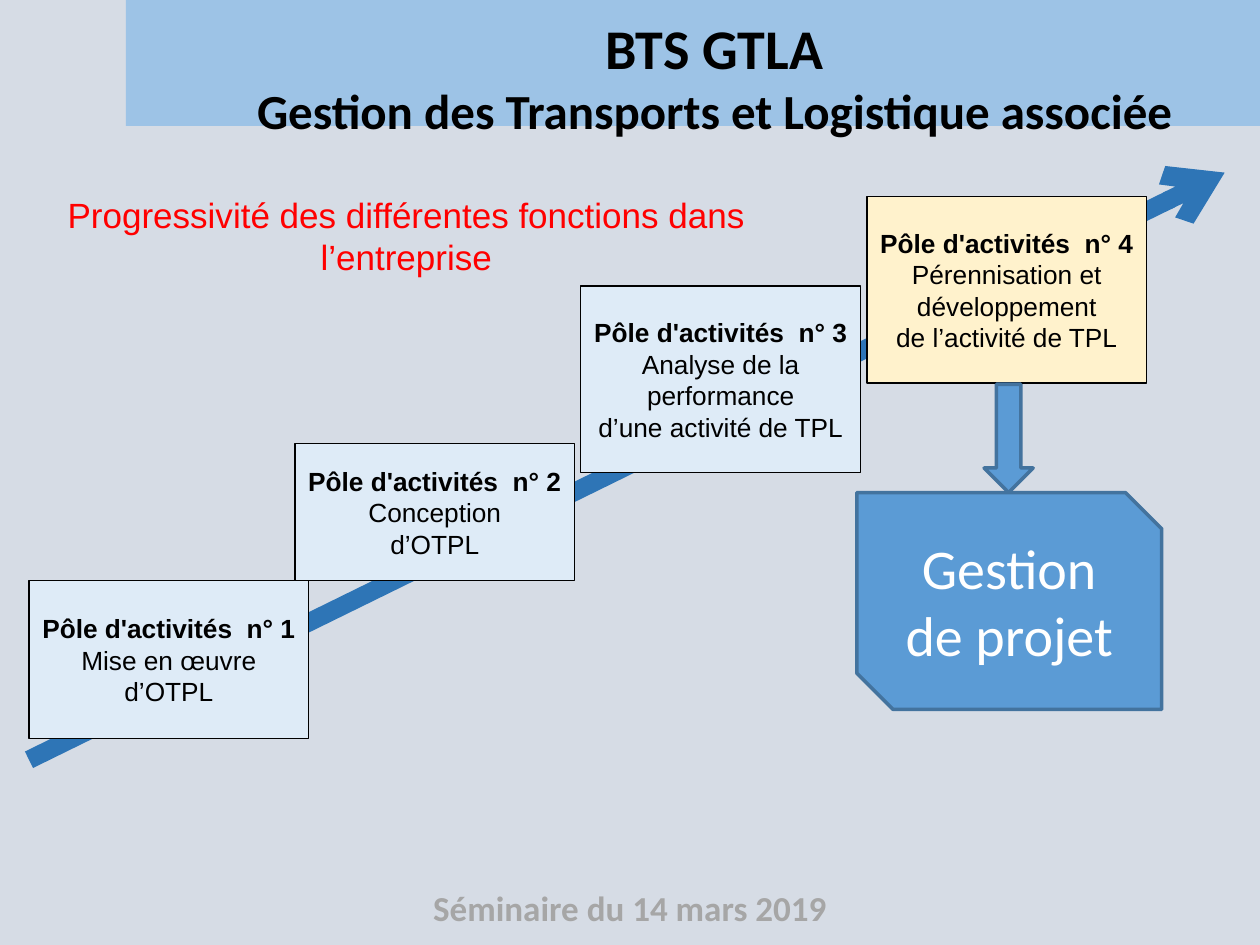
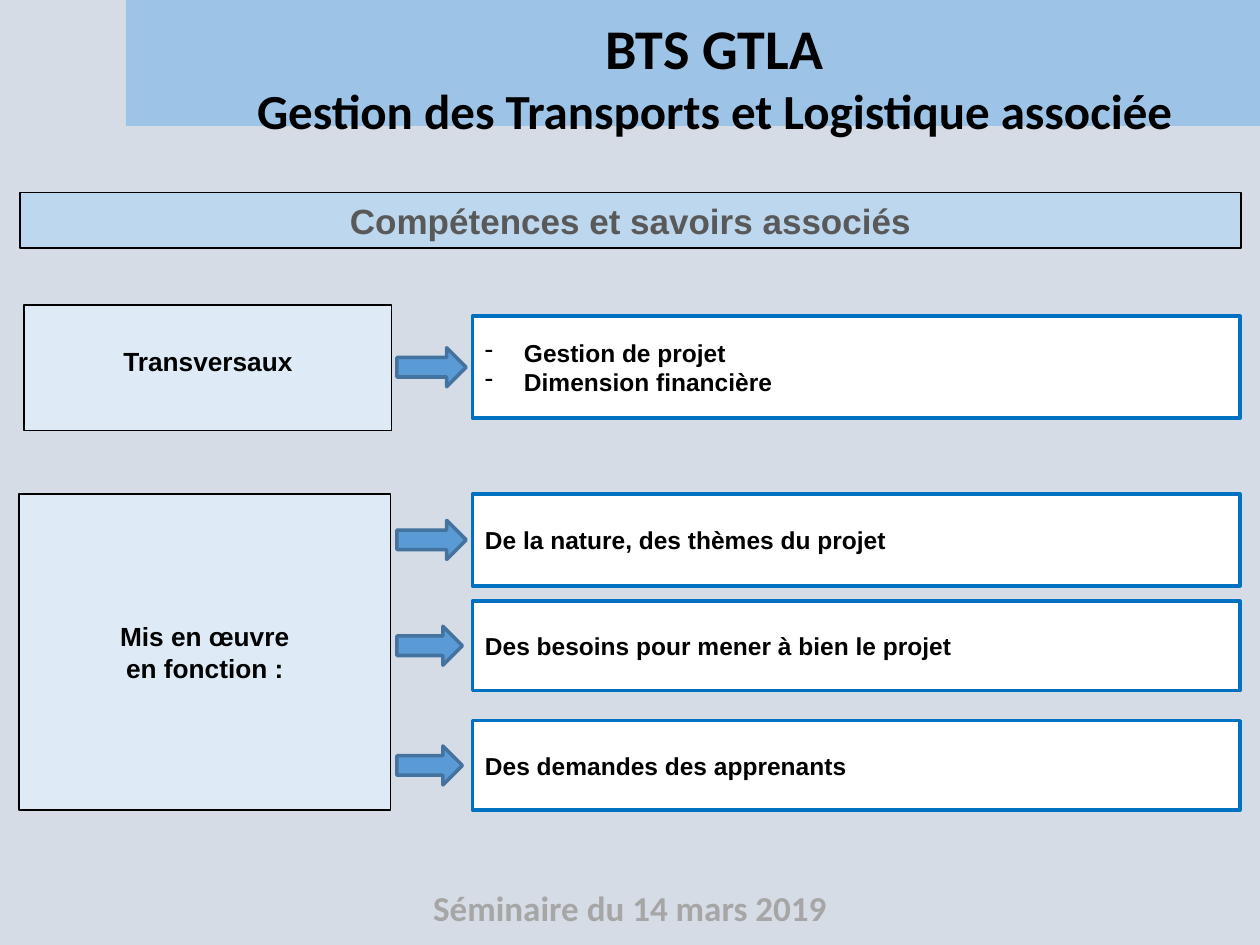
import pptx
import pptx.dml.color
import pptx.enum.shapes
import pptx.enum.text
import pptx.oxml.ns
import pptx.util
from lxml import etree

Inches = pptx.util.Inches
Pt = pptx.util.Pt
MSO = pptx.enum.shapes.MSO_SHAPE
ALIGN = pptx.enum.text.PP_ALIGN
ANCHOR = pptx.enum.text.MSO_ANCHOR
AUTO = pptx.enum.text.MSO_AUTO_SIZE

# ---- Content ----
TITLE = ["BTS GTLA", "Gestion des Transports et Logistique associée"]
FOOTER = "Séminaire du 14 mars 2019"

PROGRESSION = "Progressivité des différentes fonctions dans l’entreprise"
POLES = [  # left, top, height, fill, heading, lines
    (0.23, 4.61, 1.25, "pale", "Pôle d'activités  n° 1", ["Mise en œuvre", "d’OTPL"]),
    (2.34, 3.52, 1.09, "pale", "Pôle d'activités  n° 2", ["Conception", "d’OTPL"]),
    (4.61, 2.27, 1.48, "pale", "Pôle d'activités  n° 3",
     ["Analyse de la", "performance", "d’une activité de TPL"]),
    (6.88, 1.56, 1.48, "cream", "Pôle d'activités  n° 4",
     ["Pérennisation et", "développement", "de l’activité de TPL"]),
]
POLE_WIDTH = 2.22
PROJECT = "Gestion de projet"

SKILLS = "Compétences et savoirs associés"
GROUPS = [  # box, lines, bottom inset
    ((0.19, 2.42, 2.92, 1), ["Transversaux"], 0.16),
    ((0.15, 3.92, 2.95, 2.51), ["Mis en œuvre", "en fonction :"], 0.05),
]
ITEMS = [  # top, height, arrow width, lines
    (2.51, 0.81, 0.55, ["Gestion de projet", "Dimension financière"]),
    (3.92, 0.73, 0.55, ["De la nature, des thèmes du projet"]),
    (4.77, 0.71, 0.52, ["Des besoins pour mener à bien le projet"]),
    (5.72, 0.71, 0.52, ["Des demandes des apprenants"]),
]
ITEM_LEFT, ITEM_WIDTH = 3.75, 6.09
ARROW_LEFT, ARROW_HEIGHT = 3.15, 0.31

# Banner: straight top, then two Bézier curves along the bottom edge
BANNER_TOP = [(1.25, 0), (10, 0), (10, 1.21)]
BANNER_CURVES = [
    [(10, 1.21), (9.29, 1.44), (7.16, 1.14), (5.7, 1.17)],
    [(5.7, 1.17), (4.24, 1.21), (1.99, 1.64), (1.25, 1.41)],
]

THEME = {
    "color": {
        "background": "D6DCE5", "banner": "9DC3E6", "band": "BDD7EE",
        "pale": "DEEBF7", "cream": "FFF2CC", "white": "FFFFFF",
        "accent": "5B9BD5", "accent edge": "43739E", "trend": "2E75B6",
        "item edge": "0070C0", "black": "000000",
    },
    "text": {
        "title": {"size": 32, "name": "Calibri", "color": "000000", "bold": True},
        "subtitle": {"size": 28, "name": "Calibri", "color": "000000", "bold": True},
        "footer": {"size": 20, "name": "Calibri", "color": "A6A6A6", "bold": True},
        "progression": {"size": 20, "name": "Arial", "color": "FF0000", "bold": False},
        "band": {"size": 20, "name": "Arial", "color": "595959", "bold": True},
        "heading": {"size": 15, "name": "Arial", "color": "000000", "bold": True},
        "body": {"size": 15, "name": "Arial", "color": "000000", "bold": False},
        "item": {"size": 14, "name": "Arial", "color": "000000", "bold": True},
        "project": {"size": 32, "name": "Calibri", "color": "FFFFFF", "bold": False},
    },
}


def rgb(name):
    return pptx.dml.color.RGBColor.from_string(THEME["color"].get(name, name))


def write(sp, lines, align=ALIGN.CENTER, **frame):
    """Put (text, style) lines into a shape; frame holds text frame settings."""
    tf = sp.text_frame
    for key, value in ({"word_wrap": True} | frame).items():
        setattr(tf, key, value)
    for i, (text, style) in enumerate(lines):
        p = tf.add_paragraph() if i else tf.paragraphs[0]
        p.alignment = align
        r = p.add_run()
        r.text = text
        for key, value in THEME["text"][style].items():
            if key == "color":
                r.font.color.rgb = rgb(value)
            else:
                setattr(r.font, key, Pt(value) if key == "size" else value)
    return tf


def add_bullet(p, mark, indent):
    pPr = p._p.get_or_add_pPr()
    pPr.set("marL", str(Inches(indent)))
    pPr.set("indent", str(-Inches(indent)))
    etree.SubElement(pPr, pptx.oxml.ns.qn("a:buChar"), char=mark)


def add_block(s, kind, box, fill, edge="black", weight=0.75):
    sp = s.shapes.add_shape(kind, *map(Inches, box))
    sp.shadow.inherit = False
    sp.fill.solid()
    sp.fill.fore_color.rgb = rgb(fill)
    sp.line.color.rgb = rgb(edge)
    sp.line.width = Pt(weight)
    return sp


def add_accent(s, kind, box):
    return add_block(s, kind, box, "accent", "accent edge", 2)


def add_label(s, box, lines):
    sp = s.shapes.add_textbox(*map(Inches, box))
    write(sp, lines, auto_size=AUTO.SHAPE_TO_FIT_TEXT)


def bezier(points, steps=40):
    """Sample a cubic curve, leaving out its first point."""
    for i in range(1, steps + 1):
        t = i / steps
        weights = ((1 - t) ** 3, 3 * t * (1 - t) ** 2, 3 * t * t * (1 - t), t ** 3)
        yield tuple(sum(w * pt[axis] for w, pt in zip(weights, points)) for axis in (0, 1))


def add_page(prs):
    """Add a slide with the shared footer, banner and title."""
    s = prs.slides.add_slide(prs.slide_layouts[6])
    add_label(s, (2.5, 6.99, 5, 0.44), [(FOOTER, "footer")])
    outline = BANNER_TOP + [pt for curve in BANNER_CURVES for pt in bezier(curve)]
    builder = s.shapes.build_freeform(*outline[0], scale=Inches(1))
    builder.add_line_segments(outline[1:], close=True)
    sp = builder.convert_to_shape()
    sp.shadow.inherit = False
    sp.fill.solid()
    sp.fill.fore_color.rgb = rgb("banner")
    sp.line.fill.background()
    add_label(s, (1.88, 0.06, 7.58, 1.11), list(zip(TITLE, ("title", "subtitle"))))
    return s


def add_trend_arrow(s, start, end):
    line = s.shapes.add_connector(
        pptx.enum.shapes.MSO_CONNECTOR.STRAIGHT, *map(Inches, start + end))
    line.line.color.rgb = rgb("trend")
    line.line.width = Pt(10.5)
    qn = pptx.oxml.ns.qn
    etree.SubElement(line.line._get_or_add_ln(), qn("a:tailEnd"), type="arrow")
    etree.SubElement(line._element.spPr, qn("a:effectLst"))


def build_poles(prs):
    s = add_page(prs)
    add_trend_arrow(s, (0.23, 6.03), (9.72, 1.37))
    for left, top, height, fill, heading, lines in POLES:
        sp = add_block(s, MSO.RECTANGLE, (left, top, POLE_WIDTH, height), fill)
        write(sp, [(heading, "heading")] + [(text, "body") for text in lines],
              word_wrap=False, vertical_anchor=ANCHOR.MIDDLE)
    add_accent(s, MSO.DOWN_ARROW, (7.81, 3.05, 0.39, 0.86))
    sp = add_accent(s, MSO.SNIP_2_DIAG_RECTANGLE, (6.8, 3.91, 2.42, 1.72))
    write(sp, [(PROJECT, "project")], vertical_anchor=ANCHOR.MIDDLE)
    add_label(s, (0.02, 1.49, 6.41, 0.77), [(PROGRESSION, "progression")])


def build_skills(prs):
    s = add_page(prs)
    sp = add_block(s, MSO.RECTANGLE, (0.16, 1.53, 9.69, 0.44), "band")
    write(sp, [(SKILLS, "band")], vertical_anchor=ANCHOR.MIDDLE)
    for box, lines, inset in GROUPS:
        sp = add_block(s, MSO.RECTANGLE, box, "pale")
        write(sp, [(text, "heading") for text in lines], word_wrap=False,
              vertical_anchor=ANCHOR.MIDDLE, margin_bottom=Inches(inset))
    for top, height, arrow_width, lines in ITEMS:
        sp = add_block(s, MSO.RECTANGLE, (ITEM_LEFT, top, ITEM_WIDTH, height),
                       "white", "item edge", 2)
        tf = write(sp, [(text, "item") for text in lines], ALIGN.LEFT,
                   vertical_anchor=ANCHOR.MIDDLE)
        if len(lines) > 1:
            for p in tf.paragraphs:
                add_bullet(p, "-", 0.31)
        arrow_top = top + (height - ARROW_HEIGHT) / 2
        add_accent(s, MSO.RIGHT_ARROW, (ARROW_LEFT, arrow_top, arrow_width, ARROW_HEIGHT))


def main():
    prs = pptx.Presentation()
    prs.slide_width, prs.slide_height = Inches(10), Inches(7.5)
    background = prs.slide_master.background.fill
    background.solid()
    background.fore_color.rgb = rgb("background")
    build_poles(prs)
    build_skills(prs)
    prs.save("out.pptx")


if __name__ == "__main__":
    main()
